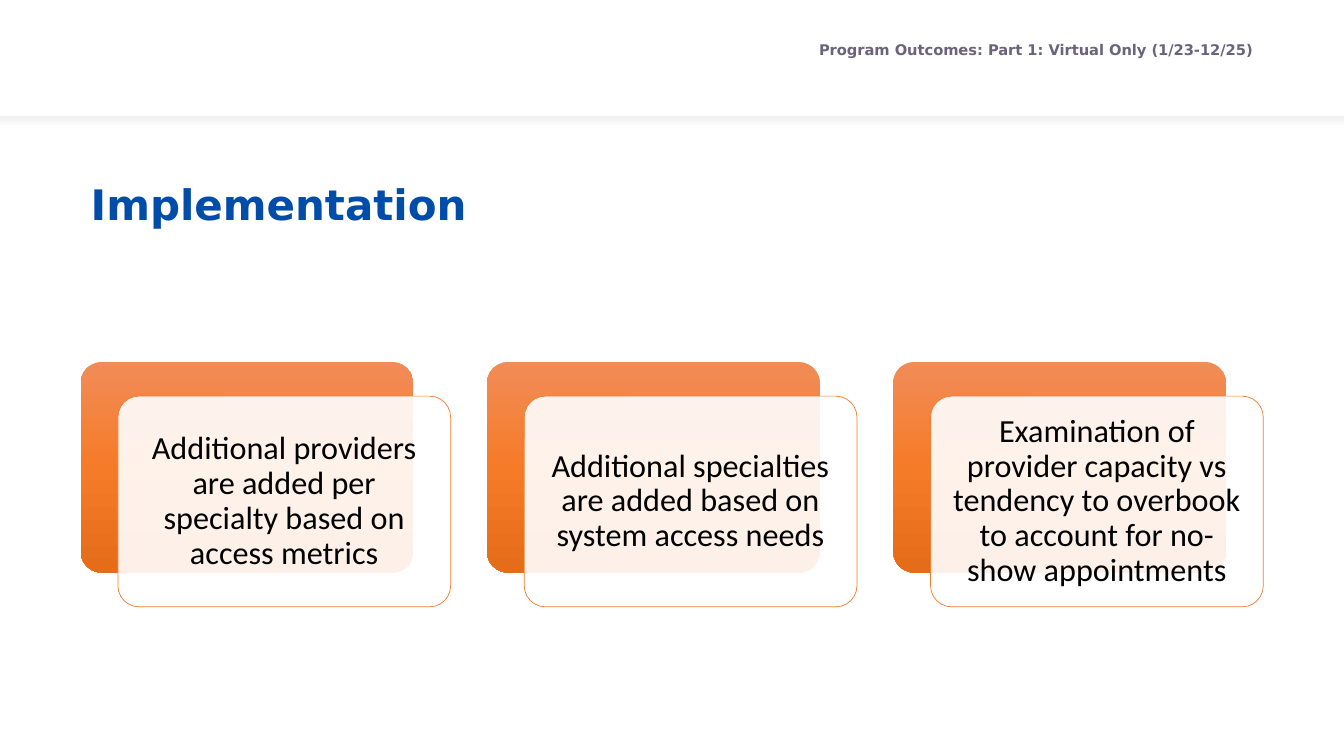
from dataclasses import dataclass

from lxml.etree import SubElement
from pptx import Presentation
from pptx.dml.color import RGBColor
from pptx.enum.shapes import MSO_SHAPE as Preset
from pptx.enum.text import MSO_ANCHOR as Anchor, MSO_AUTO_SIZE as AutoSize, PP_ALIGN as Align
from pptx.oxml import parse_xml
from pptx.oxml.ns import nsdecls, qn
from pptx.util import Inches, Pt

# Content
TITLE = "Implementation"
SECTION = "Program Outcomes: Part 1: Virtual Only (1/23-12/25)"
STEPS = [
    "Additional providers are added per specialty based on access metrics",
    "Additional specialties are added based on system access needs",
    "Examination of provider capacity vs tendency to overbook to account for no-show appointments",
]


@dataclass(frozen=True)
class Theme:
    heading_font: str = "DejaVu Sans"
    body_font: str = "Calibri"
    title_size: float = 30
    section_size: float = 10.5
    step_size: float = 23
    title: str = "004CA9"
    section: str = "69647C"
    text: str = "000000"
    paper: str = "FFFFFF"
    outline: str = "ED7D31"
    gradient: tuple = ((0, "F18C57"), (50, "F67B28"), (100, "E56C19"))


theme = Theme()

# Grid, in inches
WIDTH, HEIGHT = 13.33, 7.5
MARGIN = 0.8
CONTENT_WIDTH = WIDTH - 2 * MARGIN
CARD_WIDTH, CARD_HEIGHT = 3.3, 2.09
OFFSET_X, OFFSET_Y = 0.37, 0.34
CARD_TOP = 3.59
PITCH = (CONTENT_WIDTH - CARD_WIDTH - OFFSET_X) / (len(STEPS) - 1)
TEXT_INSET = 0.06
SECTION_WIDTH = 5.1


def box(left, top, width, height):
    return [Inches(value) for value in (left, top, width, height)]


def place(shape, *bounds):
    shape.left, shape.top, shape.width, shape.height = box(*bounds)


def write(shape, text, font, size, color, bold, align, spacing, anchor):
    frame = shape.text_frame
    frame.text = text
    frame.word_wrap = True
    frame.auto_size = AutoSize.NONE
    frame.vertical_anchor = anchor
    paragraph = frame.paragraphs[0]
    paragraph.alignment = align
    paragraph.line_spacing = spacing
    paragraph.space_before = Pt(0)
    run_font = paragraph.runs[0].font
    run_font.name, run_font.size, run_font.bold = font, Pt(size), bold
    run_font.color.rgb = RGBColor.from_string(color)
    return frame


def add_panel(slide, preset, bounds, fill):
    shape = slide.shapes.add_shape(preset, *box(*bounds))
    shape.shadow.inherit = False
    shape.fill.solid()
    shape.fill.fore_color.rgb = RGBColor.from_string(fill)
    shape.line.fill.background()
    if preset == Preset.ROUNDED_RECTANGLE:
        shape.adjustments[0] = 0.1
    return shape


def set_gradient(shape, stops):
    stop_xml = "".join(
        f'<a:gs pos="{share * 1000}"><a:srgbClr val="{color}"/></a:gs>' for share, color in stops
    )
    gradient = parse_xml(
        f'<a:gradFill {nsdecls("a")} rotWithShape="1"><a:gsLst>{stop_xml}</a:gsLst>'
        '<a:lin ang="5400000" scaled="0"/></a:gradFill>'
    )
    solid = shape.element.spPr.find(qn("a:solidFill"))
    solid.getparent().replace(solid, gradient)


def add_header_bar(slide):
    bar = add_panel(slide, Preset.RECTANGLE, (-0.05, -0.07, 13.41, 1.22), theme.paper)
    effects = bar.element.spPr.find(qn("a:effectLst"))
    shadow = SubElement(effects, qn("a:outerShdw"), blurRad=str(Pt(4)), dist=str(Pt(3)),
                        dir="5400000", algn="t", rotWithShape="0")
    color = SubElement(shadow, qn("a:srgbClr"), val="000000")
    SubElement(color, qn("a:alpha"), val="6000")
    slide.shapes.element.insert(2, bar.element)  # behind the placeholders


def add_step(slide, index, text):
    left = MARGIN + index * PITCH
    back = add_panel(slide, Preset.ROUNDED_RECTANGLE,
                     (left, CARD_TOP, CARD_WIDTH, CARD_HEIGHT), theme.paper)
    set_gradient(back, theme.gradient)

    left, top = left + OFFSET_X, CARD_TOP + OFFSET_Y
    front = add_panel(slide, Preset.ROUNDED_RECTANGLE,
                      (left, top, CARD_WIDTH, CARD_HEIGHT), theme.paper)
    SubElement(front.element.spPr.find(qn("a:solidFill"))[0], qn("a:alpha"), val="90000")
    front.line.color.rgb = RGBColor.from_string(theme.outline)
    front.line.width = Pt(0.5)

    label = slide.shapes.add_textbox(*box(
        left + TEXT_INSET, top + TEXT_INSET,
        CARD_WIDTH - 2 * TEXT_INSET, CARD_HEIGHT - 2 * TEXT_INSET))
    frame = write(label, text, theme.body_font, theme.step_size, theme.text, False,
                  Align.CENTER, 0.9, Anchor.MIDDLE)
    frame.margin_left = frame.margin_right = Inches(0.1)
    frame.margin_top = frame.margin_bottom = Inches(0.1)


def main():
    presentation = Presentation()
    presentation.slide_width, presentation.slide_height = Inches(WIDTH), Inches(HEIGHT)
    slide = presentation.slides.add_slide(presentation.slide_layouts[1])

    # Title and section label
    title, section = slide.shapes.title, slide.placeholders[1]
    place(title, MARGIN, 1.33, CONTENT_WIDTH, 1.45)
    write(title, TITLE, theme.heading_font, theme.title_size, theme.title, True,
          Align.LEFT, 0.9, Anchor.MIDDLE)
    place(section, WIDTH - MARGIN - SECTION_WIDTH, 0.4, SECTION_WIDTH, 0.29)
    frame = write(section, SECTION, theme.heading_font, theme.section_size, theme.section, True,
                  Align.RIGHT, 0.7, Anchor.TOP)
    properties = frame.paragraphs[0]._p.get_or_add_pPr()
    properties.set("marL", "0")
    properties.set("indent", "0")
    SubElement(properties, qn("a:buNone"))

    # Header bar and step cards
    add_header_bar(slide)
    for index, text in enumerate(STEPS):
        add_step(slide, index, text)

    presentation.save("out.pptx")


if __name__ == "__main__":
    main()
